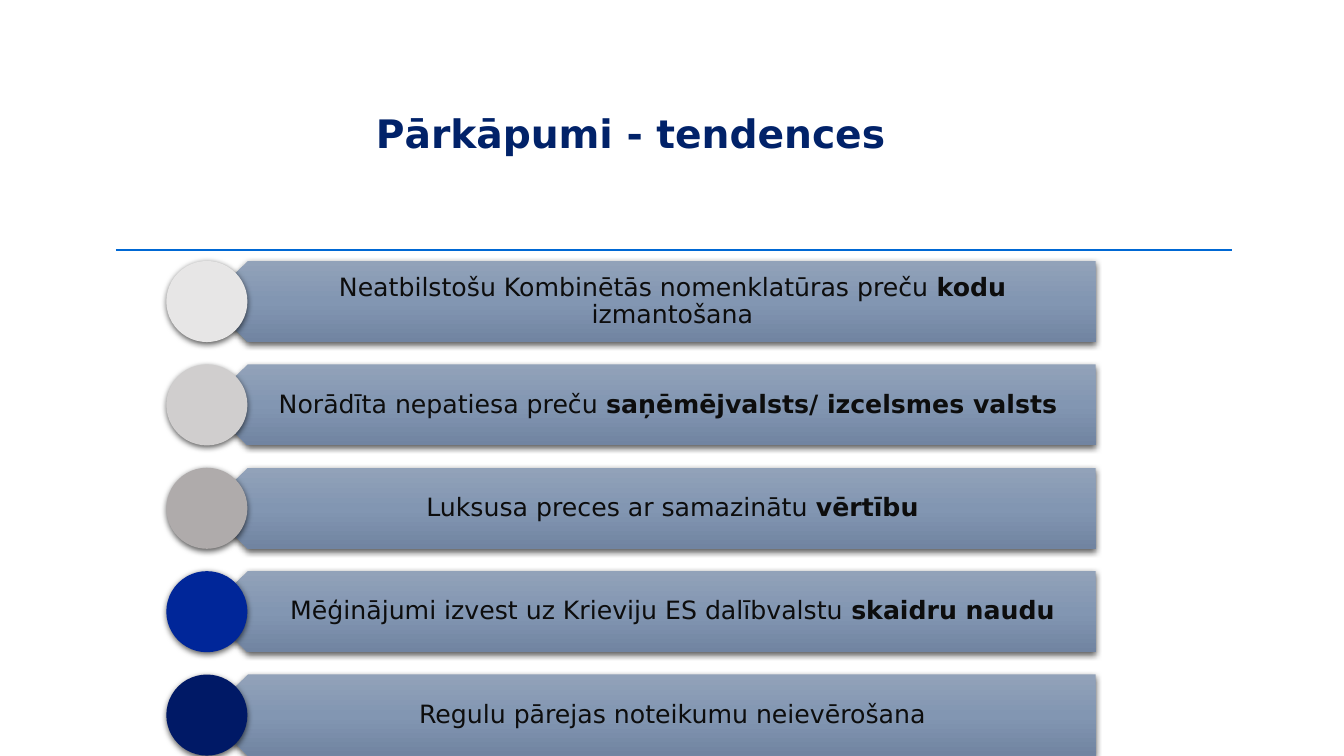
from lxml import etree
from pptx import Presentation
from pptx.dml.color import RGBColor
from pptx.enum.shapes import MSO_CONNECTOR, MSO_SHAPE
from pptx.enum.text import MSO_ANCHOR, PP_ALIGN
from pptx.oxml import parse_xml
from pptx.oxml.ns import nsdecls, qn
from pptx.util import Pt

TITLE = "Pārkāpumi - tendences"
FONT = "DejaVu Sans"
NAVY = RGBColor(0x01, 0x22, 0x69)
RULE_BLUE = RGBColor(0x00, 0x68, 0xD4)
INK = RGBColor(0x0D, 0x0D, 0x0D)
BAR_GRADIENT = [
    (0, RGBColor(0x92, 0xA2, 0xB9)),
    (50, RGBColor(0x82, 0x96, 0xB2)),
    (100, RGBColor(0x71, 0x84, 0xA1)),
]
# Circle colour, then the text as (words, bold) pieces
TRENDS = [
    (RGBColor(0xE7, 0xE6, 0xE6),
     [("Neatbilstošu Kombinētās nomenklatūras preču ", False), ("kodu ", True),
      ("izmantošana", False)]),
    (RGBColor(0xD0, 0xCE, 0xCE),
     [("Norādīta nepatiesa preču ", False), ("saņēmējvalsts/ izcelsmes valsts ", True)]),
    (RGBColor(0xAF, 0xAB, 0xAB),
     [("Luksusa preces ar samazinātu ", False), ("vērtību", True)]),
    (RGBColor(0x00, 0x26, 0x99),
     [("Mēģinājumi izvest uz Krieviju ES dalībvalstu ", False), ("skaidru naudu", True)]),
    (RGBColor(0x00, 0x19, 0x66),
     [("Regulu pārejas noteikumu neievērošana", False)]),
]

FIRST_TOP, PITCH, ROW_HEIGHT = 186.4, 73.85, 57.9
CIRCLE_LEFT = 118.8
BAR_LEFT, BAR_WIDTH = 148.1, 634.5
TEXT_LEFT = BAR_LEFT + ROW_HEIGHT / 4


def add_shadow(shape):
    shape._element.spPr.append(parse_xml(
        f'<a:effectLst {nsdecls("a")}>'
        '<a:outerShdw blurRad="57150" dist="19050" dir="5400000" algn="ctr" rotWithShape="0">'
        '<a:srgbClr val="000000"><a:alpha val="63000"/></a:srgbClr>'
        '</a:outerShdw></a:effectLst>'))


def fill_gradient(shape, stops):
    """Fill from top to bottom, whatever the rotation of the shape."""
    stop_xml = "".join(
        f'<a:gs pos="{position * 1000}"><a:srgbClr val="{color}"/></a:gs>'
        for position, color in stops)
    gradient = parse_xml(
        f'<a:gradFill {nsdecls("a")} rotWithShape="0"><a:gsLst>{stop_xml}</a:gsLst>'
        '<a:lin ang="5400000" scaled="0"/></a:gradFill>')
    shape._element.spPr.find(qn("a:prstGeom")).addnext(gradient)


def add_bar(shapes, top):
    bar = shapes.add_shape(MSO_SHAPE.PENTAGON, Pt(BAR_LEFT), Pt(top),
                           Pt(BAR_WIDTH), Pt(ROW_HEIGHT))
    bar.rotation = 180
    bar.line.fill.background()
    fill_gradient(bar, BAR_GRADIENT)
    add_shadow(bar)


def add_label(shapes, top, pieces):
    label = shapes.add_textbox(Pt(TEXT_LEFT), Pt(top),
                               Pt(BAR_LEFT + BAR_WIDTH - TEXT_LEFT), Pt(ROW_HEIGHT))
    frame = label.text_frame
    frame.word_wrap = True
    frame.vertical_anchor = MSO_ANCHOR.MIDDLE
    frame.margin_left, frame.margin_right = Pt(25.5), Pt(10)
    frame.margin_top = frame.margin_bottom = Pt(5)
    paragraph = frame.paragraphs[0]
    paragraph.alignment = PP_ALIGN.CENTER
    paragraph.line_spacing = 0.9
    paragraph.font.name = FONT
    paragraph.font.size = Pt(18)
    paragraph.font.color.rgb = INK
    for words, bold in pieces:
        run = paragraph.add_run()
        run.text = words
        run.font.bold = bold


def add_circle(shapes, top, color):
    circle = shapes.add_shape(MSO_SHAPE.OVAL, Pt(CIRCLE_LEFT), Pt(top),
                              Pt(ROW_HEIGHT), Pt(ROW_HEIGHT))
    circle.fill.solid()
    circle.fill.fore_color.rgb = color
    circle.line.fill.background()
    add_shadow(circle)


def add_title(slide):
    title = slide.shapes.title
    title.left, title.top, title.width, title.height = Pt(61.2), Pt(31.7), Pt(778.3), Pt(84.2)
    frame = title.text_frame
    frame.text = TITLE
    frame.vertical_anchor = MSO_ANCHOR.BOTTOM
    paragraph = frame.paragraphs[0]
    paragraph.alignment = PP_ALIGN.CENTER
    paragraph.line_spacing = 0.9
    paragraph.font.name = FONT
    paragraph.font.size = Pt(28)
    paragraph.font.bold = True
    paragraph.font.color.rgb = NAVY


def add_rule(slide):
    rule = slide.shapes.add_connector(MSO_CONNECTOR.STRAIGHT, Pt(82.8), Pt(178.5),
                                      Pt(879.8), Pt(178.5))
    rule.line.color.rgb = RULE_BLUE
    rule.line.width = Pt(1.25)
    etree.SubElement(rule._element.spPr, qn("a:effectLst"))


def main():
    presentation = Presentation()
    presentation.slide_width, presentation.slide_height = Pt(960), Pt(540)
    slide = presentation.slides.add_slide(presentation.slide_layouts[5])
    add_title(slide)
    add_rule(slide)
    trend_list = slide.shapes.add_group_shape()
    for row, (color, pieces) in enumerate(TRENDS):
        top = FIRST_TOP + row * PITCH
        add_bar(trend_list.shapes, top)
        add_label(trend_list.shapes, top, pieces)
        add_circle(trend_list.shapes, top, color)
    presentation.save("out.pptx")


if __name__ == "__main__":
    main()
